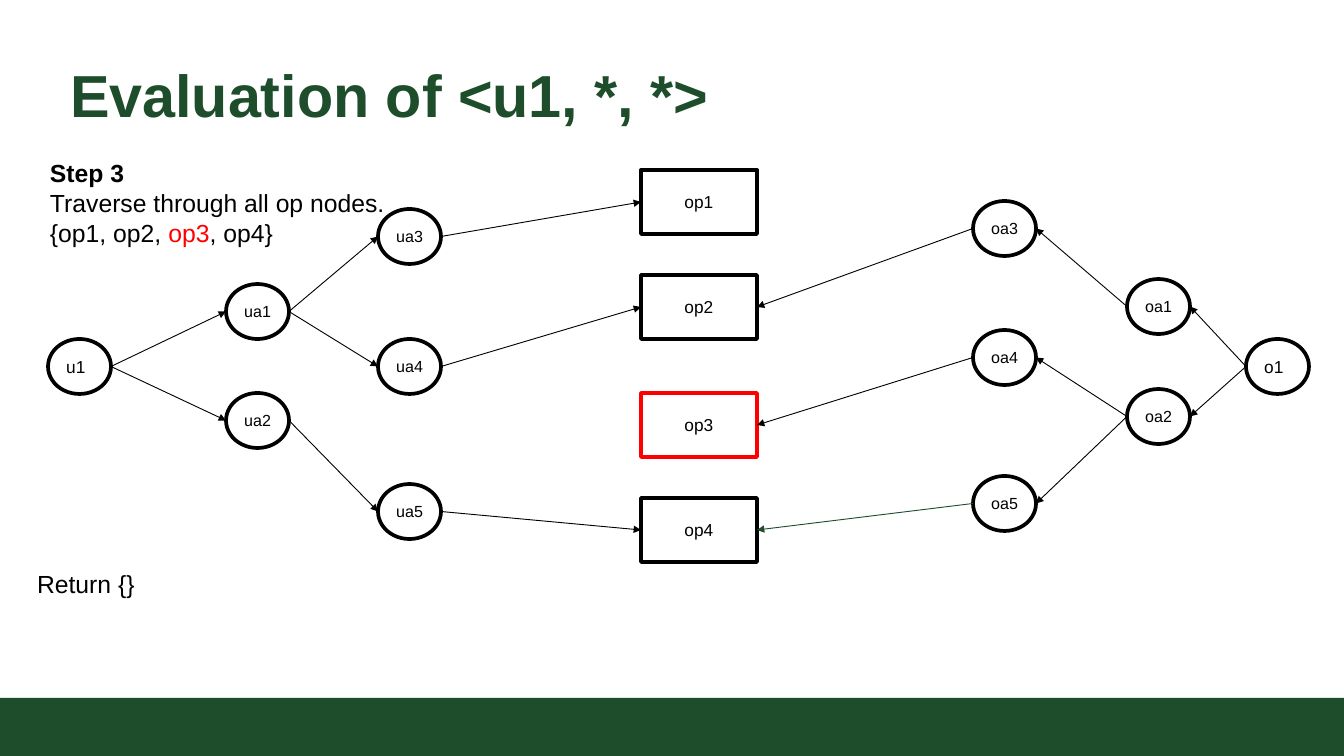
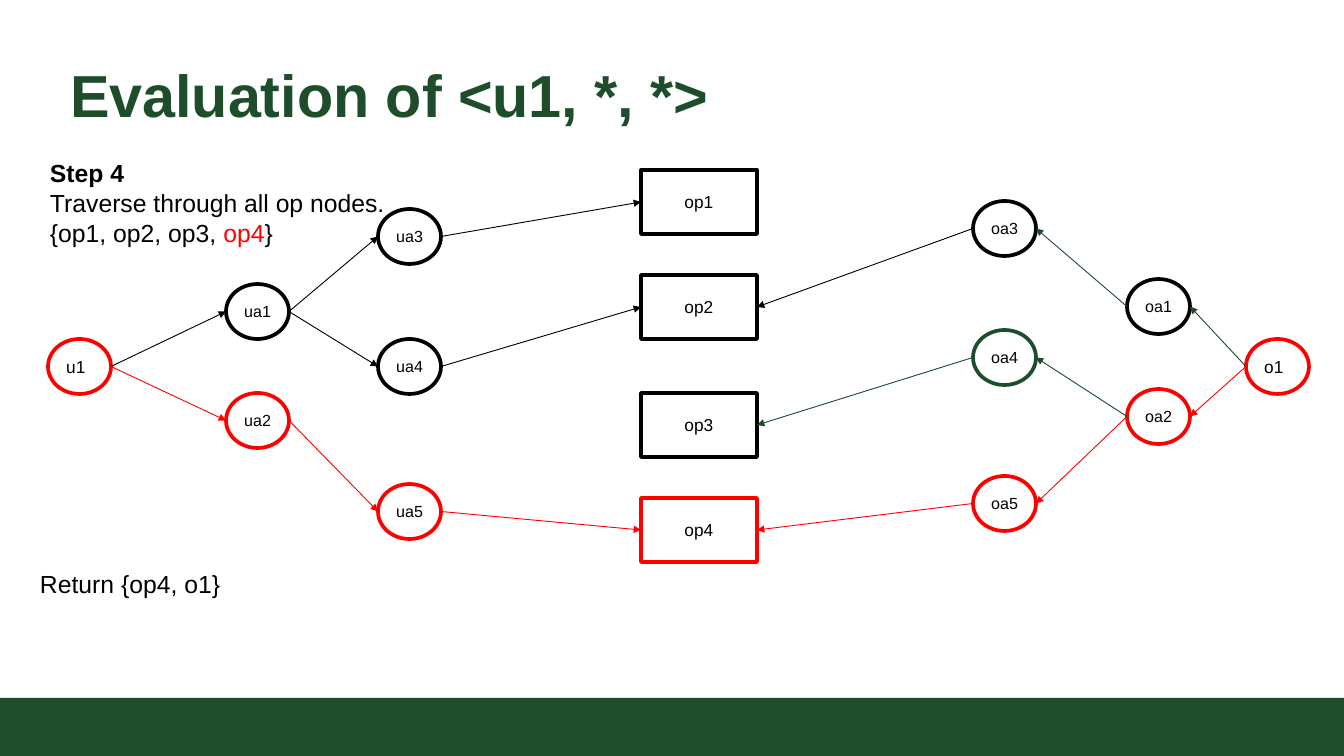
from pptx import Presentation
from pptx.dml.color import RGBColor
from pptx.enum.shapes import MSO_CONNECTOR as Wire, MSO_SHAPE as Kind
from pptx.enum.text import MSO_ANCHOR as Anchor, MSO_AUTO_SIZE as Fit, PP_ALIGN as Align
from pptx.oxml.ns import qn
from pptx.util import Pt
from lxml.etree import SubElement

SCALE = 10280  # EMU per px
WIDE, HIGH = 1344, 756
GREEN, RED, BLACK = "1E4D2B", "FF0000", "000000"
FONT = "Arial"
PAD = 9
NODE, RECT = (63, 55), (116, 64)

# Columns of the graph: left edge, then the top of each node
COLS = [
    (0, {"u1": 169}),
    (178, {"ua1": 114, "ua2": 223}),
    (330, {"ua3": 39, "ua4": 169, "ua5": 314}),
    (1198, {"o1": 169}),
    (1079, {"oa1": 109, "oa2": 219}),
    (925, {"oa3": 31, "oa4": 160, "oa5": 306}),
    (593, {"op1": 0, "op2": 105, "op3": 223, "op4": 328}),
]
EDGES = """u1-ua1 u1-ua2 ua1-ua3 ua1-ua4 ua2-ua5 ua3-op1 ua4-op2 ua5-op4
o1-oa1 o1-oa2 oa1-oa3 oa2-oa5 oa2-oa4 oa4-op3 oa5-op4 oa3-op2""".split()

TITLE = "Evaluation of <u1, *, *>"
STEPS = [
    {"name": "Step 3", "ops": ("{op1, op2, ", "op3", ", op4}"),
     "back": "Return {}", "left": 28, "red": {"op3"}, "green": {"oa5-op4"}},
    {"name": "Step 4", "ops": ("{op1, op2, op3, ", "op4", "}"),
     "back": "Return {op4, o1}", "left": 31,
     "red": {"u1", "ua2", "ua5", "op4", "oa5", "oa2", "o1"},
     "green": {"oa4", "o1-oa1", "oa1-oa3", "oa2-oa4", "oa4-op3"}},
]


def px(*nums):
    return [round(n * SCALE) for n in nums]


def hue(code):
    return RGBColor.from_string(code)


def add_run(para, text, size, color=BLACK, bold=False):
    run = para.add_run()
    run.text = text
    font = run.font
    font.name, font.size, font.bold = FONT, Pt(size), bold
    font.color.rgb = hue(color)


def set_frame(frame, anchor, right=PAD):
    frame.word_wrap, frame.auto_size = True, Fit.NONE
    frame.vertical_anchor = anchor
    frame.margin_left = frame.margin_top = frame.margin_bottom = px(PAD)[0]
    frame.margin_right = px(right)[0]


def add_text(slide, box):
    frame = slide.shapes.add_textbox(*px(*box)).text_frame
    set_frame(frame, Anchor.TOP)
    return frame


# Shared look: footer band and title place
def set_base(layout, slide):
    band = slide.shapes.add_shape(Kind.RECTANGLE, *px(0, 698, WIDE, HIGH - 698))
    band.shadow.inherit = False
    band.fill.solid()
    band.fill.fore_color.rgb = hue(GREEN)
    band.line.fill.background()
    layout.element.cSld.spTree.insert(2, band.element)
    title = layout.placeholders[0]
    title.left, title.top, title.width, title.height = px(61, 39, 1222, 99)
    set_frame(title.text_frame, Anchor.BOTTOM)


def add_title(slide):
    para = slide.shapes.title.text_frame.paragraphs[0]
    para.alignment = Align.LEFT
    add_run(para, TITLE, 48, GREEN, True)


def add_node(slide, name, box, color):
    is_op = name.startswith("op")
    kind = Kind.RECTANGLE if is_op else Kind.OVAL
    node = slide.shapes.add_shape(kind, *px(*box))
    node.shadow.inherit = False
    node.fill.background()
    node.line.color.rgb, node.line.width = hue(color), Pt(3)
    # Ovals get no right inset, so a short label stays on one line
    set_frame(node.text_frame, Anchor.MIDDLE, PAD if is_op else 0)
    para = node.text_frame.paragraphs[0]
    para.alignment = Align.CENTER if is_op else Align.LEFT
    add_run(para, name, 14 if is_op or len(name) == 2 else 13)
    return node


def add_arrow(slide, start, end, color, joined):
    ahead = end.left > start.left
    x1 = start.left + (start.width if ahead else 0)
    x2 = end.left + (0 if ahead else end.width)
    y1, y2 = (n.top + n.height // 2 for n in (start, end))
    arrow = slide.shapes.add_connector(Wire.STRAIGHT, x1, y1, x2, y2)
    if joined:
        arrow.end_connect(end, 1 if ahead else 3)
    arrow.line.color.rgb, arrow.line.width = hue(color), Pt(0.75)
    SubElement(arrow.line._get_or_add_ln(), qn("a:tailEnd"), type="triangle")
    SubElement(arrow.element.spPr, qn("a:effectLst"))


# Graph: nodes first, then the arrows between them
def add_graph(slide, left, top, red, green):
    def pick(name):
        if set(name.split("-")) <= red:
            return RED
        return GREEN if name in green else BLACK

    nodes = {}
    for x, col in COLS:
        for name, y in col.items():
            size = RECT if name.startswith("op") else NODE
            nodes[name] = add_node(slide, name, (left + x, top + y, *size), pick(name))
    for edge in EDGES:
        start, end = edge.split("-")
        add_arrow(slide, nodes[start], nodes[end], pick(edge), end.startswith("op"))


# Step note: heading, then the op nodes with the current one in red
def add_note(slide, box, name, ops):
    frame = add_text(slide, box)
    add_run(frame.paragraphs[0], name, 20, bold=True)
    para = frame.add_paragraph()
    before, now, after = ops
    add_run(para, "Traverse through all op nodes. " + before, 20)
    add_run(para, now, 20, RED)
    add_run(para, after, 20)


def add_step(slide, step):
    add_title(slide)
    add_graph(slide, 48, 170, step["red"], step["green"])
    add_note(slide, (41, 149, 375, 78), step["name"], step["ops"])
    back = add_text(slide, (step["left"], 560, 938, 112))
    add_run(back.paragraphs[0], step["back"], 20)


def main():
    prs = Presentation()
    prs.slide_width, prs.slide_height = px(WIDE, HIGH)
    layout = prs.slide_layouts[5]
    slides = [prs.slides.add_slide(layout) for _ in STEPS]
    set_base(layout, slides[0])
    for slide, step in zip(slides, STEPS):
        add_step(slide, step)
    prs.save("out.pptx")


if __name__ == "__main__":
    main()
